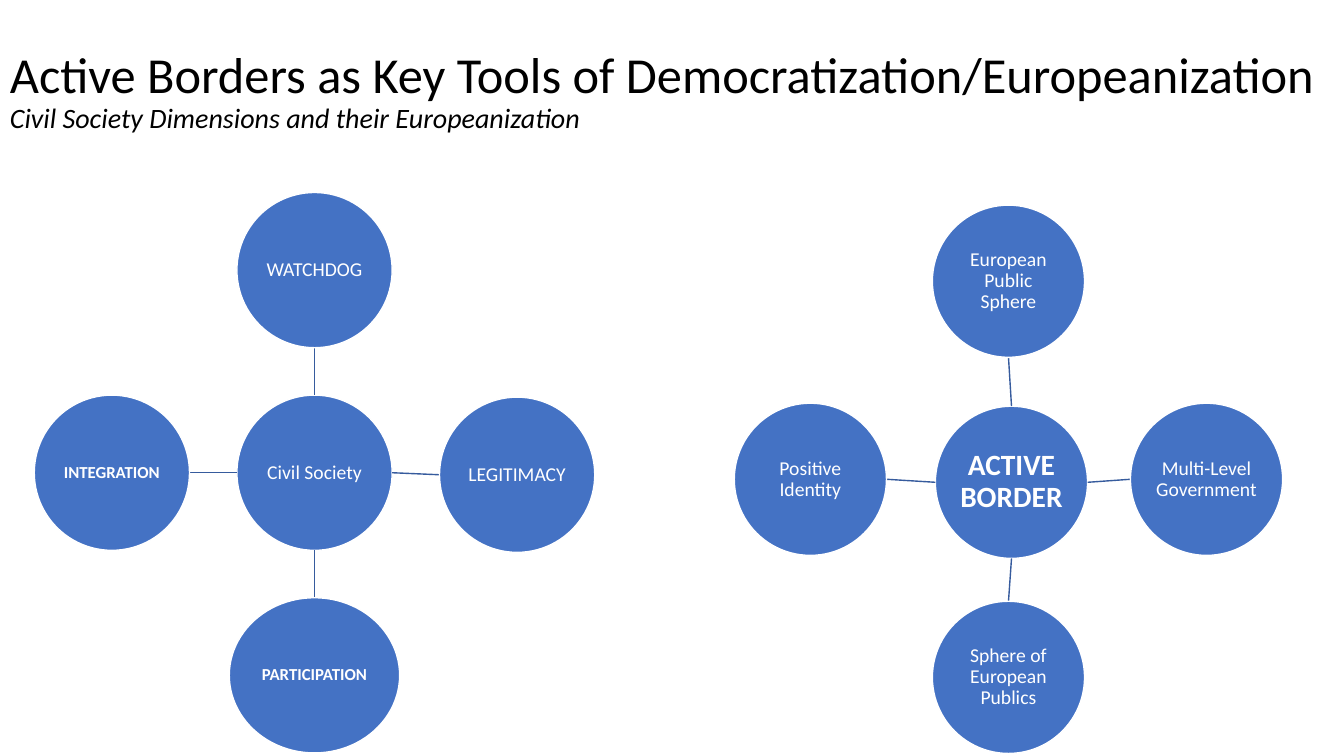
from pptx import Presentation
from pptx.dml.color import RGBColor
from pptx.enum.shapes import MSO_CONNECTOR as Connector, MSO_SHAPE as Shape
from pptx.enum.text import MSO_ANCHOR as Anchor, PP_ALIGN as Align
from pptx.oxml.ns import qn
from pptx.util import Inches, Pt
from lxml.etree import SubElement

BLACK = RGBColor(0x00, 0x00, 0x00)
WHITE = RGBColor(0xFF, 0xFF, 0xFF)
BLUE = RGBColor(0x44, 0x72, 0xC4)
DARK_BLUE = RGBColor(0x36, 0x5B, 0x9D)
COLUMNS, ROWS = 160, 90
TOP, RIGHT, BOTTOM, LEFT = (0, -1), (1, 0), (0, 1), (-1, 0)


class Canvas:
    """Draws styled elements on one slide, measured in grid columns and rows."""

    font = "Calibri"
    line_spacing = 0.9

    def __init__(self, presentation):
        self.slide = presentation.slides.add_slide(presentation.slide_layouts[6])
        self.column = presentation.slide_width / COLUMNS
        self.row = presentation.slide_height / ROWS

    def place(self, x, y):
        return round(x * self.column), round(y * self.row)

    def style(self, paragraph, text, size, color, bold=False, italic=False):
        paragraph.text = text
        paragraph.line_spacing = self.line_spacing
        font = paragraph.font
        font.name, font.size, font.color.rgb = self.font, Pt(size), color
        font.bold, font.italic = bold, italic

    def heading(self, x, y, width, height, title, subtitle):
        box = self.slide.shapes.add_textbox(*self.place(x, y), *self.place(width, height))
        frame = box.text_frame
        frame.word_wrap = True
        self.style(frame.paragraphs[0], title, 36, BLACK)
        self.style(frame.add_paragraph(), subtitle, 20, BLACK, italic=True)

    def circle(self, center, width, height, text, size=14, bold=False):
        x, y = center
        shape = self.slide.shapes.add_shape(
            Shape.OVAL, *self.place(x - width / 2, y - height / 2), *self.place(width, height))
        shape.shadow.inherit = False
        shape.fill.solid()
        shape.fill.fore_color.rgb = BLUE
        shape.line.color.rgb = WHITE
        shape.line.width = Pt(1)
        frame = shape.text_frame
        frame.word_wrap = True
        frame.vertical_anchor = Anchor.MIDDLE
        frame.margin_left = frame.margin_right = Inches(0.01)
        frame.margin_top = frame.margin_bottom = Inches(0.01)
        paragraph = frame.paragraphs[0]
        paragraph.alignment = Align.CENTER
        self.style(paragraph, text, size, WHITE, bold)

    def spoke(self, start, end):
        line = self.slide.shapes.add_connector(
            Connector.STRAIGHT, *self.place(*start), *self.place(*end))
        line.line.color.rgb = DARK_BLUE
        line.line.width = Pt(1)
        SubElement(line._element.spPr, qn("a:effectLst"))

    def wheel(self, hub, ring, diameter, step, hub_text, satellites):
        radius = diameter / 2
        self.circle(hub, diameter, diameter, **hub_text)
        for (dx, dy), drop, width, label in satellites:
            center = ring[0] + dx * step, ring[1] + dy * step + drop
            self.spoke((hub[0] + dx * radius, hub[1] + dy * radius),
                       (center[0] - dx * radius, center[1] - dy * radius))
            self.circle(center, width, diameter, **label)


def main():
    presentation = Presentation()
    presentation.slide_width, presentation.slide_height = Inches(13.33), Inches(7.5)
    canvas = Canvas(presentation)
    canvas.heading(0, 5.4, 160.9, 12,
                   "Active Borders as Key Tools of Democratization/Europeanization",
                   "Civil Society Dimensions and their Europeanization")

    society = (37.44, 56.28)
    canvas.wheel(society, society, 18.48, 24.12, {"text": "Civil Society"}, [
        (TOP, 0, 18.48, {"text": "WATCHDOG"}),
        (RIGHT, 0.24, 18.48, {"text": "LEGITIMACY"}),
        (BOTTOM, 0, 20.28, {"text": "PARTICIPATION", "size": 12, "bold": True}),
        (LEFT, 0, 18.48, {"text": "INTEGRATION", "size": 12, "bold": True}),
    ])

    border_labels = [
        (TOP, "European Public Sphere"),
        (RIGHT, "Multi-Level Government"),
        (BOTTOM, "Sphere of European Publics"),
        (LEFT, "Positive Identity"),
    ]
    canvas.wheel((120.42, 57.42), (120.06, 57.06), 18.12, 23.58,
                 {"text": "ACTIVE BORDER", "size": 21, "bold": True},
                 [(side, 0, 18.12, {"text": text}) for side, text in border_labels])

    presentation.save("out.pptx")


if __name__ == "__main__":
    main()
